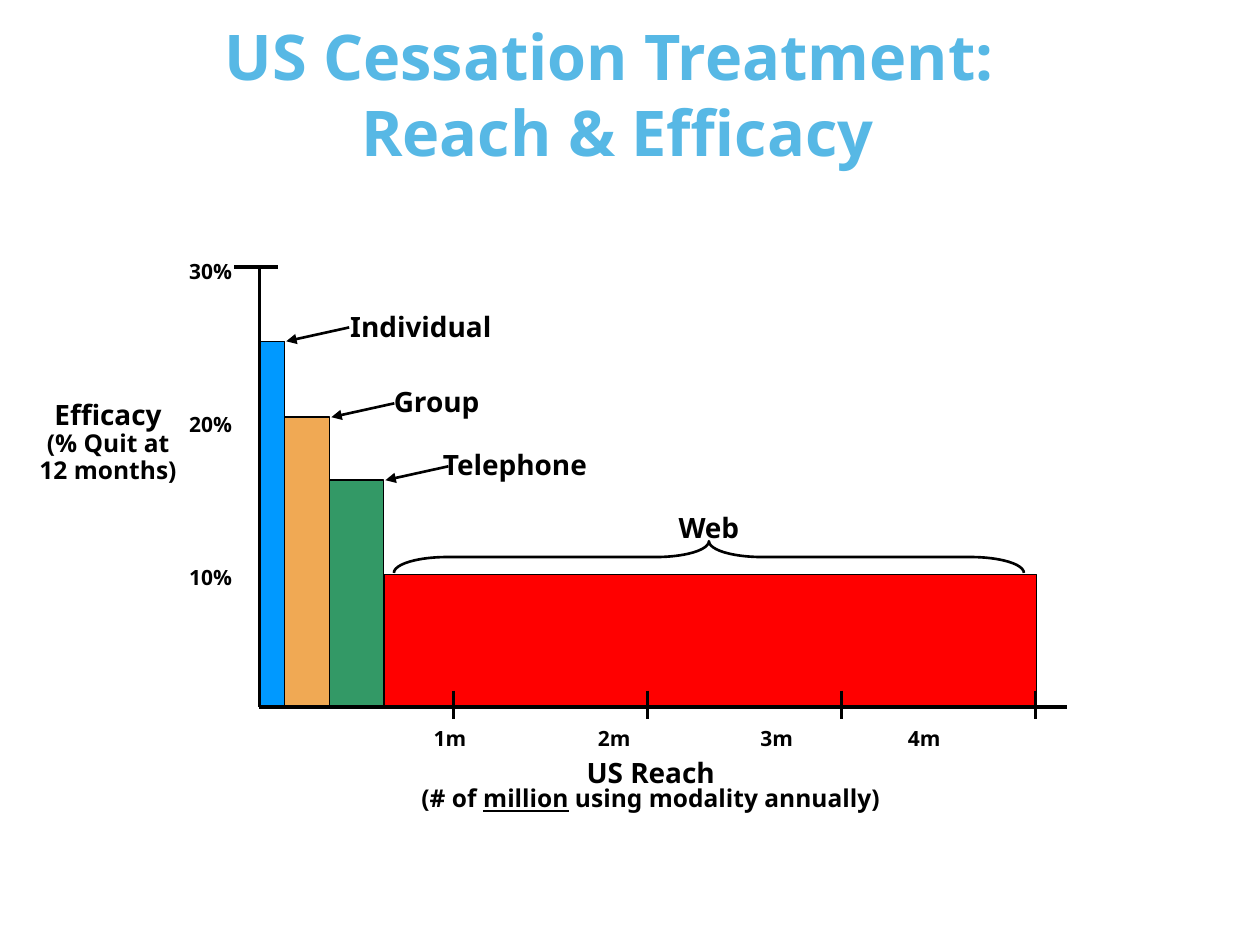
"""Build the slide on reach and efficacy of US cessation treatment."""
import pptx
import pptx.util
from pptx.dml.color import RGBColor
from pptx.enum.shapes import MSO_CONNECTOR, MSO_SHAPE
from pptx.enum.text import MSO_ANCHOR, PP_ALIGN
from pptx.oxml.ns import qn
from lxml import etree

Cm, Pt = pptx.util.Cm, pptx.util.Pt
FONT = "Noto Sans"
BLACK = RGBColor(0x00, 0x00, 0x00)
SKY = RGBColor(0x57, 0xB8, 0xE5)
BLUE = RGBColor(0x00, 0x99, 0xFF)
ORANGE = RGBColor(0xF0, 0xA9, 0x54)
GREEN = RGBColor(0x33, 0x99, 0x66)
RED = RGBColor(0xFF, 0x00, 0x00)

TITLE = [[("US Cessation Treatment: ", 36, False)], [("Reach & Efficacy", 36, False)]]
EFFICACY = [[("Efficacy", 16, False)], [("(% Quit at 12 months)", 14, False)]]
REACH = [
    [("US Reach", 16, False)],
    [("(# of ", 14, False), ("million", 14, True), (" using modality annually)", 14, False)],
]
BARS = [
    ("Individual", 0.51, 6.88, BLUE, 7.06),
    ("Group", 0.91, 8.41, ORANGE, 7.94),
    ("Telephone", 1.09, 9.68, GREEN, 8.93),
    ("Web", 13.16, 11.58, RED, None),
]
PERCENTS = ["30%", "20%", "10%"]
MILLIONS = [("1m", 9.07), ("2m", 12.38), ("3m", 15.66), ("4m", 18.63)]

AXIS_X, AXIS_TOP, AXIS_Y, AXIS_END = 5.23, 5.38, 14.25, 21.51
TICK_START, TICK_STEP = 9.14, 3.91
PERCENT_Y, PERCENT_STEP = 5.46, 3.09


def add_text(s, x, y, w, h, lines, align=PP_ALIGN.CENTER, color=BLACK,
             anchor=MSO_ANCHOR.MIDDLE, spacing=1.0):
    sp = s.shapes.add_textbox(Cm(x), Cm(y), Cm(w), Cm(h))
    tf = sp.text_frame
    tf.word_wrap = True
    tf.vertical_anchor = anchor
    tf.margin_left = tf.margin_right = tf.margin_top = tf.margin_bottom = 0
    p = tf.paragraphs[0]
    p.alignment = align
    p.line_spacing = spacing
    for i, line in enumerate(lines):
        if i:
            p.add_line_break()
        for text, size, underline in line:
            r = p.add_run()
            r.text = text
            r.font.name = FONT
            r.font.size = Pt(size)
            r.font.bold = True
            r.font.underline = underline
            r.font.color.rgb = color


def add_label(s, x, y, w, text, size, align):
    add_text(s, x, y - 0.4, w, 0.8, [[(text, size, False)]], align)


def add_line(s, x1, y1, x2, y2, width, arrow=False):
    c = s.shapes.add_connector(MSO_CONNECTOR.STRAIGHT, Cm(x1), Cm(y1), Cm(x2), Cm(y2))
    c.line.color.rgb = BLACK
    c.line.width = Pt(width)
    if arrow:
        etree.SubElement(c.line._get_or_add_ln(), qn("a:headEnd"), type="triangle")
    etree.SubElement(c._element.spPr, qn("a:effectLst"))


def add_bar(s, x, top, width, color):
    sp = s.shapes.add_shape(MSO_SHAPE.RECTANGLE, Cm(x), Cm(top), Cm(width), Cm(AXIS_Y - top))
    sp.shadow.inherit = False
    sp.fill.solid()
    sp.fill.fore_color.rgb = color
    sp.line.color.rgb = BLACK
    sp.line.width = Pt(0.75)


def add_brace(s):
    sp = s.shapes.add_shape(MSO_SHAPE.LEFT_BRACE, Cm(13.97), Cm(4.88), Cm(0.64), Cm(12.7))
    sp.rotation = 90
    sp.adjustments[0] = 1.67
    sp.adjustments[1] = 0.5
    sp.shadow.inherit = False
    sp.fill.background()
    sp.line.color.rgb = BLACK
    sp.line.width = Pt(1.5)


def main():
    prs = pptx.Presentation()
    prs.slide_width, prs.slide_height = Cm(25.4), Cm(19.05)
    s = prs.slides.add_slide(prs.slide_layouts[6])
    add_text(s, 0, 0.2, 24.89, 3.2, TITLE, color=SKY, anchor=MSO_ANCHOR.BOTTOM)

    x = AXIS_X
    for name, width, top, color, label_x in BARS:
        add_bar(s, x, top, width, color)
        x += width
        if label_x:
            add_line(s, x + 0.03, top, x + 1.3, top - 0.28, 1.5, arrow=True)
            add_label(s, label_x, top - 0.31, 3.6, name, 16, PP_ALIGN.LEFT)
        else:
            add_label(s, 12.49, top - 0.95, 3.6, name, 16, PP_ALIGN.CENTER)
    add_brace(s)

    add_line(s, AXIS_X, AXIS_TOP, AXIS_X, AXIS_Y, 2)
    add_line(s, AXIS_X, AXIS_Y, AXIS_END, AXIS_Y, 2)
    add_line(s, 4.72, AXIS_TOP, 5.61, AXIS_TOP, 2)
    for i, (text, center) in enumerate(MILLIONS):
        tick = TICK_START + i * TICK_STEP
        add_line(s, tick, 13.92, tick, 14.5, 1.5)
        add_label(s, center - 0.75, 14.88, 1.5, text, 12, PP_ALIGN.CENTER)
    for i, text in enumerate(PERCENTS):
        add_label(s, 3.18, PERCENT_Y + i * PERCENT_STEP, 1.5, text, 12, PP_ALIGN.RIGHT)

    add_text(s, 0.73, 7.93, 2.9, 2, EFFICACY, spacing=0.9)
    add_text(s, 5.18, 15.12, 15.88, 1.5, REACH, spacing=0.8)
    prs.save("out.pptx")


if __name__ == "__main__":
    main()
